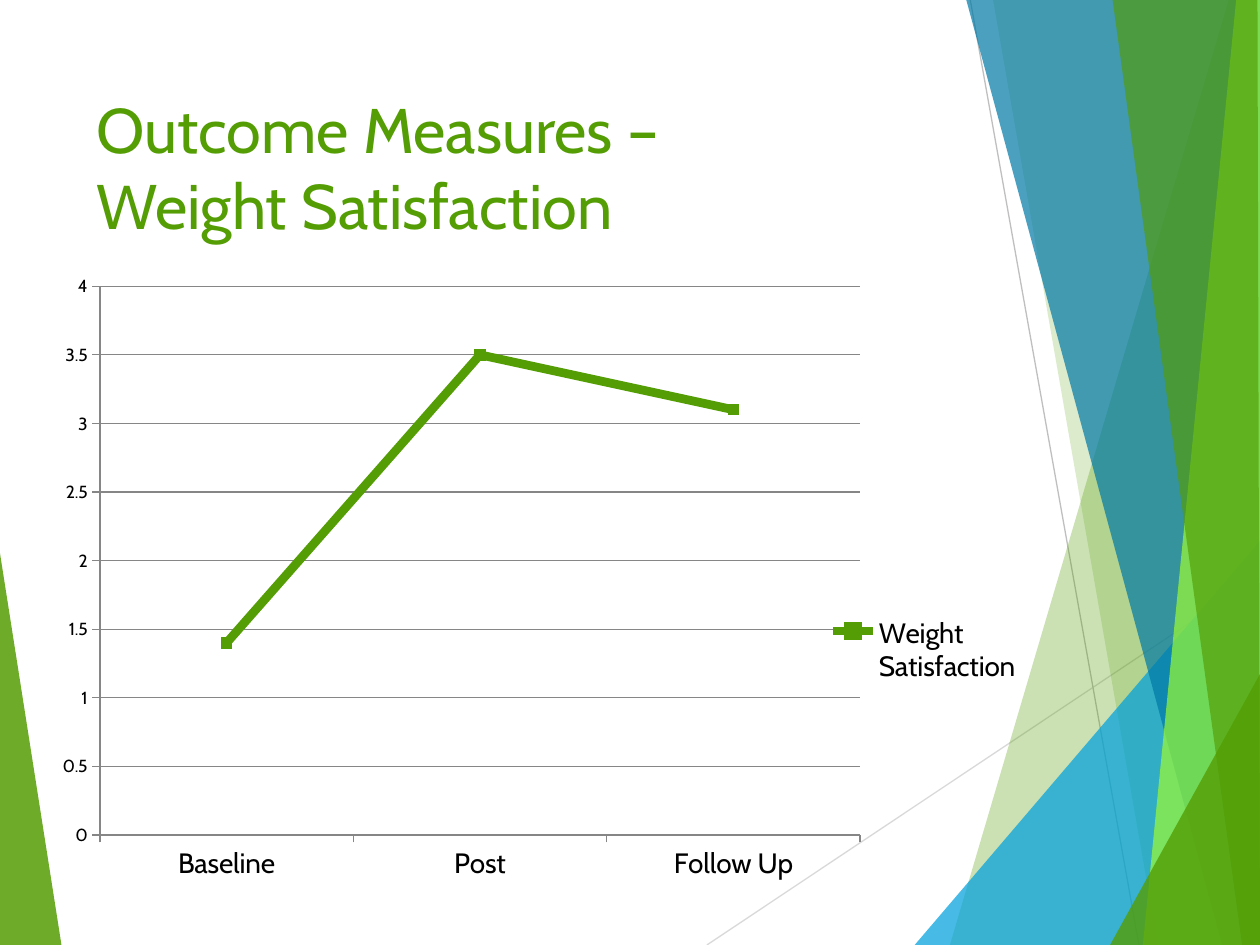
import pptx
import pptx.chart.data
import pptx.dml.color
import pptx.enum.chart
import pptx.enum.shapes
import pptx.enum.text
import pptx.oxml.ns
import pptx.oxml.xmlchemy
import pptx.util

GREEN = pptx.dml.color.RGBColor(0x54, 0x9D, 0x04)
LIME = pptx.dml.color.RGBColor(0x9B, 0xFA, 0x33)
SKY = pptx.dml.color.RGBColor(0x00, 0xA1, 0xDC)
BLUE = pptx.dml.color.RGBColor(0x00, 0x79, 0xA5)
LIGHT_GREY = pptx.dml.color.RGBColor(0xD9, 0xD9, 0xD9)
MID_GREY = pptx.dml.color.RGBColor(0xBF, 0xBF, 0xBF)
AXIS_GREY = pptx.dml.color.RGBColor(0x86, 0x86, 0x86)
BLACK = pptx.dml.color.RGBColor(0, 0, 0)

WIDTH, HEIGHT = 25.4, 19.05
BOTTOM_RIGHT, TOP_RIGHT = (WIDTH, HEIGHT), (WIDTH, 0)


def lengths(*values):
    return [pptx.util.Cm(value) for value in values]


def add_child(parent, tag, **attributes):
    child = pptx.oxml.xmlchemy.OxmlElement(tag)
    for name, value in attributes.items():
        child.set(name, str(value))
    parent.append(child)
    return child


def set_layout(element, index, **settings):
    """Place a chart part by fractions of the chart's size."""
    for old in element.findall(pptx.oxml.ns.qn("c:layout")):
        element.remove(old)
    layout = pptx.oxml.xmlchemy.OxmlElement("c:layout")
    manual = add_child(layout, "c:manualLayout")
    for name, value in settings.items():
        add_child(manual, f"c:{name}", val=value)
    element.insert(index, layout)


class SlideBuilder:
    font_name = "Cabin"

    def __init__(self, slide):
        self.slide = slide

    def style_font(self, font, size, color):
        font.name = self.font_name
        font.size = pptx.util.Pt(size)
        font.color.rgb = color

    def facet(self, points, color, opacity):
        start, *rest = [lengths(*point) for point in points]
        builder = self.slide.shapes.build_freeform(*start)
        builder.add_line_segments(rest, close=True)
        shape = builder.convert_to_shape()
        shape.shadow.inherit = False
        shape.fill.solid()
        shape.fill.fore_color.rgb = color
        shape.line.fill.background()
        color_element = shape._element.spPr.find(".//" + pptx.oxml.ns.qn("a:srgbClr"))
        add_child(color_element, "a:alpha", val=opacity * 1000)

    def line(self, start, end, color):
        connector = self.slide.shapes.add_connector(
            pptx.enum.shapes.MSO_CONNECTOR.STRAIGHT, *lengths(*start, *end))
        connector.line.color.rgb = color
        connector.line.width = pptx.util.Pt(0.75)
        add_child(connector._element.spPr, "a:effectLst")

    def title(self, text, *box):
        frame = self.slide.shapes.add_textbox(*lengths(*box)).text_frame
        frame.word_wrap = True
        frame.vertical_anchor = pptx.enum.text.MSO_ANCHOR.TOP
        paragraph = frame.paragraphs[0]
        paragraph.text = text
        self.style_font(paragraph.font, 36, GREEN)

    def line_chart(self, categories, name, values, *box):
        data = pptx.chart.data.CategoryChartData()
        data.categories = categories
        data.add_series(name, values)
        chart = self.slide.shapes.add_chart(
            pptx.enum.chart.XL_CHART_TYPE.LINE_MARKERS, *lengths(*box), data).chart
        chart.has_title = False
        self.style_font(chart.font, 10, BLACK)

        # Series
        chart.plots[0].vary_by_categories = False
        series = chart.plots[0].series[0]
        series.smooth = False
        series.format.line.color.rgb = GREEN
        series.format.line.width = pptx.util.Pt(5)
        series.marker.style = pptx.enum.chart.XL_MARKER_STYLE.SQUARE
        series.marker.size = 6
        series.marker.format.fill.solid()
        series.marker.format.fill.fore_color.rgb = GREEN
        series.marker.format.line.color.rgb = GREEN

        # Axes
        value_axis, category_axis = chart.value_axis, chart.category_axis
        value_axis.minimum_scale, value_axis.maximum_scale = 0, 4
        value_axis.major_unit = 0.5
        value_axis.has_major_gridlines = True
        for axis in (value_axis, category_axis):
            axis.major_tick_mark = pptx.enum.chart.XL_TICK_MARK.OUTSIDE
        for part in (value_axis, category_axis, value_axis.major_gridlines):
            part.format.line.color.rgb = AXIS_GREY
            part.format.line.width = pptx.util.Pt(0.75)
        self.style_font(category_axis.tick_labels.font, 16, BLACK)

        # Legend and layout
        chart.has_legend = True
        chart.legend.position = pptx.enum.chart.XL_LEGEND_POSITION.RIGHT
        chart.legend.include_in_layout = False
        self.style_font(chart.legend.font, 16, BLACK)
        set_layout(chart._chartSpace.chart.plotArea, 0, layoutTarget="inner",
                   xMode="edge", yMode="edge", x=0.055, y=0.038, w=0.724, h=0.871)
        set_layout(chart.legend._element, 1, xMode="edge", yMode="edge",
                   x=0.74, y=0.55, w=0.2, h=0.13)


def main():
    presentation = pptx.Presentation()
    presentation.slide_width, presentation.slide_height = lengths(WIDTH, HEIGHT)
    builder = SlideBuilder(presentation.slides.add_slide(presentation.slide_layouts[6]))

    # Left facet and thin lines
    builder.facet([(0, 11.15), (1.24, HEIGHT), (0, HEIGHT)], GREEN, 85)
    builder.line((14.25, HEIGHT), (WIDTH, 11.61), LIGHT_GREY)
    builder.line((19.56, 0), (22.96, HEIGHT), MID_GREY)

    # Right facets, all reaching the bottom right corner
    for left_points, right_point, color, opacity in [
        ([(24.77, 0), (19.15, HEIGHT)], TOP_RIGHT, GREEN, 30),
        ([(20.02, 0), (23.34, HEIGHT)], TOP_RIGHT, GREEN, 20),
        ([(18.44, HEIGHT)], (WIDTH, 10.9), SKY, 72),
        ([(19.48, 0), (24.64, HEIGHT)], TOP_RIGHT, BLUE, 70),
        ([(24.92, 0), (23.04, HEIGHT)], TOP_RIGHT, LIME, 70),
        ([(22.43, 0), (25.04, HEIGHT)], (25.35, 0), GREEN, 65),
        ([(22.38, HEIGHT)], (WIDTH, 13.59), GREEN, 80),
    ]:
        builder.facet([*left_points, BOTTOM_RIGHT, right_point], color, opacity)

    # Title and chart
    builder.title("Outcome Measures – \vWeight Satisfaction", 1.7, 1.7, 17.63, 3.66)
    builder.line_chart(["Baseline", "Post", "Follow Up"], "Weight Satisfaction",
                       [1.4, 3.5, 3.1], 0.85, 5.29, 21.17, 12.7)
    presentation.save("out.pptx")


if __name__ == "__main__":
    main()
